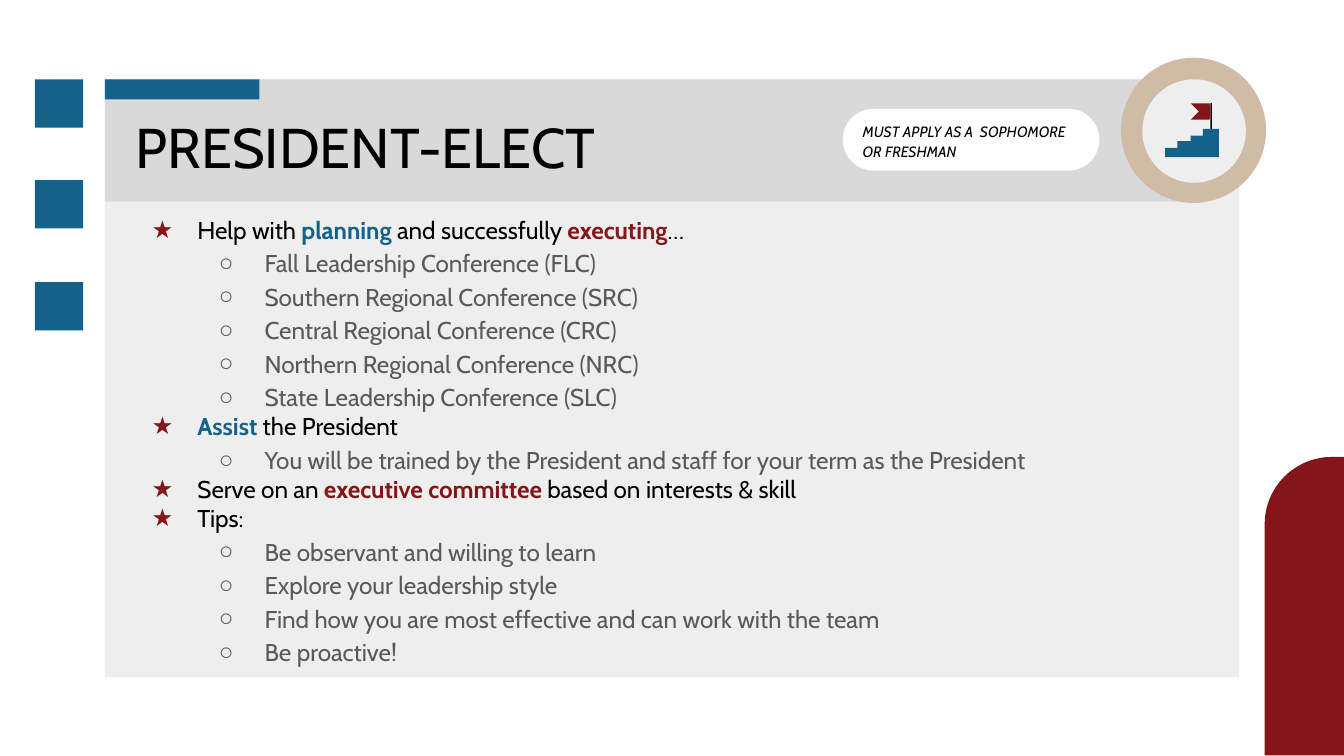
from math import cos, pi, sin

from lxml.etree import SubElement
from pptx import Presentation
from pptx.dml.color import RGBColor
from pptx.enum.shapes import MSO_SHAPE
from pptx.enum.text import MSO_ANCHOR
from pptx.oxml.ns import qn
from pptx.util import Inches, Pt

BLUE, RED, DEEP_RED, TAN = "126289", "841619", "84181B", "D0BBA6"
PALE, GRAY, DARK = "EEEEEE", "D9D9D9", "595959"
BLACK, WHITE = "000000", "FFFFFF"


def paint(target, color):
    """Give a shape a plain fill, or a font its colour."""
    if hasattr(target, "shadow"):
        target.fill.solid()
        target.fill.fore_color.rgb = RGBColor.from_string(color)
        target.line.fill.background()
        target.shadow.inherit = False
    else:
        target.color.rgb = RGBColor.from_string(color)


def add_run(paragraph, text, size, color=BLACK, bold=False, italic=False):
    run = paragraph.add_run()
    run.text = text
    run.font.name = "Cabin"
    run.font.size = Pt(size)
    run.font.bold = bold
    run.font.italic = italic
    paint(run.font, color)


presentation = Presentation()
presentation.slide_width = Inches(10)
presentation.slide_height = Inches(10) * 9 // 16
slide = presentation.slides.add_slide(presentation.slide_layouts[6])
shapes = slide.shapes

# Panel, header, accent bar, badge ring, note pill and badge centre
blocks = [
    (MSO_SHAPE.RECTANGLE, 0.78, 0.59, 8.44, 4.45, PALE),
    (MSO_SHAPE.RECTANGLE, 0.78, 0.59, 8.12, 0.91, GRAY),
    (MSO_SHAPE.RECTANGLE, 0.78, 0.59, 1.15, 0.15, BLUE),
    (MSO_SHAPE.OVAL, 8.34, 0.43, 1.08, 1.08, TAN),
    (MSO_SHAPE.ROUNDED_RECTANGLE, 6.27, 0.81, 1.91, 0.46, WHITE),
    (MSO_SHAPE.OVAL, 8.5, 0.59, 0.77, 0.77, PALE),
]
# Three squares down the left edge
for top in (0.59, 1.34, 2.1):
    blocks.append((MSO_SHAPE.RECTANGLE, 0.26, top, 0.36, 0.36, BLUE))
for kind, left, top, width, height, color in blocks:
    shape = shapes.add_shape(kind, Inches(left), Inches(top), Inches(width), Inches(height))
    paint(shape, color)
    if kind == MSO_SHAPE.ROUNDED_RECTANGLE:
        shape.adjustments[0] = 0.5

# Corner tab with one rounded corner, then the flag and its stairs
corner = [
    (9.91 - 0.5 * cos(step * pi / 48), 3.9 - 0.5 * sin(step * pi / 48))
    for step in range(25)
]
tab = corner + [(10, 3.4), (10, 5.62), (9.41, 5.62)]
flag = [(8.86, 0.77), (8.92, 0.83), (8.86, 0.89), (9, 0.89), (9.01, 0.83), (9, 0.77)]
pole = [(9, 0.77), (9, 0.98), (9.02, 0.98), (9.02, 0.77)]
pole_shade = [(9.01, 0.77), (9.01, 0.98), (9.02, 0.98), (9.02, 0.77)]
stairs = [
    (8.95, 0.96), (8.95, 1.01), (8.86, 1.01), (8.86, 1.05), (8.76, 1.05),
    (8.76, 1.1), (8.67, 1.1), (8.67, 1.17), (9.07, 1.17), (9.07, 0.96),
]
top_step = [(9.01, 0.96), (9.01, 1.17), (9.07, 1.17), (9.07, 0.96)]
for points, color in [
    (tab, RED), (flag, RED), (pole, DARK), (pole_shade, BLACK),
    (stairs, BLUE), (top_step, BLUE),
]:
    # Whole EMU points, since the builder rounds its coordinates
    corners = [(Inches(x), Inches(y)) for x, y in points]
    builder = shapes.build_freeform(*corners[0])
    builder.add_line_segments(corners[1:], close=True)
    paint(builder.convert_to_shape(), color)

# Text boxes for title, duties and note
frames = []
for left, top, width, height in [
    (0.91, 0.92, 4.72, 0.34), (0.87, 1.5, 8.48, 3.62), (6.32, 0.79, 1.83, 0.47),
]:
    box = shapes.add_textbox(Inches(left), Inches(top), Inches(width), Inches(height))
    frame = box.text_frame
    frame.word_wrap = True
    frame.margin_left = frame.margin_right = Inches(0.1)
    frame.margin_top = frame.margin_bottom = Inches(0.1)
    frames.append(frame)
title, duties, note = frames

title.vertical_anchor = MSO_ANCHOR.MIDDLE
add_run(title.paragraphs[0], "PRESIDENT-ELECT", 30)
note.paragraphs[0].line_spacing = 1.15
note.paragraphs[0].space_after = Pt(16)
add_run(note.paragraphs[0], "MUST APPLY AS A  SOPHOMORE OR FRESHMAN", 8, italic=True)

# Each duty: heading pieces (text, colour), then its sub-items
outline = [
    ([("Help with ", BLACK), ("planning", BLUE), (" and successfully ", BLACK),
      ("executing", DEEP_RED), ("…", BLACK)],
     ["Fall Leadership Conference (FLC)",
      "Southern Regional Conference (SRC)",
      "Central Regional Conference (CRC)",
      "Northern Regional Conference (NRC)",
      "State Leadership Conference (SLC)"]),
    ([("Assist", BLUE), (" the President", BLACK)],
     ["You will be trained by the President and staff for your term as the President"]),
    ([("Serve on an ", BLACK), ("executive committee ", RED),
      ("based on interests & skill", BLACK)], []),
    ([("Tips:", BLACK)],
     ["Be observant and willing to learn",
      "Explore your leadership style",
      "Find how you are most effective and can work with the team",
      "Be proactive!"]),
]
lines = []
for heading, items in outline:
    lines.append((0, heading))
    lines += [(1, [(item, DARK)]) for item in items]

for number, (level, pieces) in enumerate(lines):
    paragraph = duties.add_paragraph() if number else duties.paragraphs[0]
    paragraph.level = level
    paragraph.line_spacing = 1.15 if level else 1.0
    for text, color in pieces:
        add_run(paragraph, text, 13, color, bold=color in (BLUE, RED, DEEP_RED))
    # Hanging indent and coloured bullet
    properties = paragraph._p.get_or_add_pPr()
    properties.set("marL", str(Inches(0.5 + 0.5 * level)))
    properties.set("indent", str(Inches(-0.34)))
    bullet_color = SubElement(properties, qn("a:buClr"))
    SubElement(bullet_color, qn("a:srgbClr"), val=DARK if level else RED)
    SubElement(properties, qn("a:buSzPts"), val="1300")
    SubElement(properties, qn("a:buFont"), typeface="Arial" if level else "Cabin")
    SubElement(properties, qn("a:buChar"), char="○" if level else "★")

presentation.save("out.pptx")
